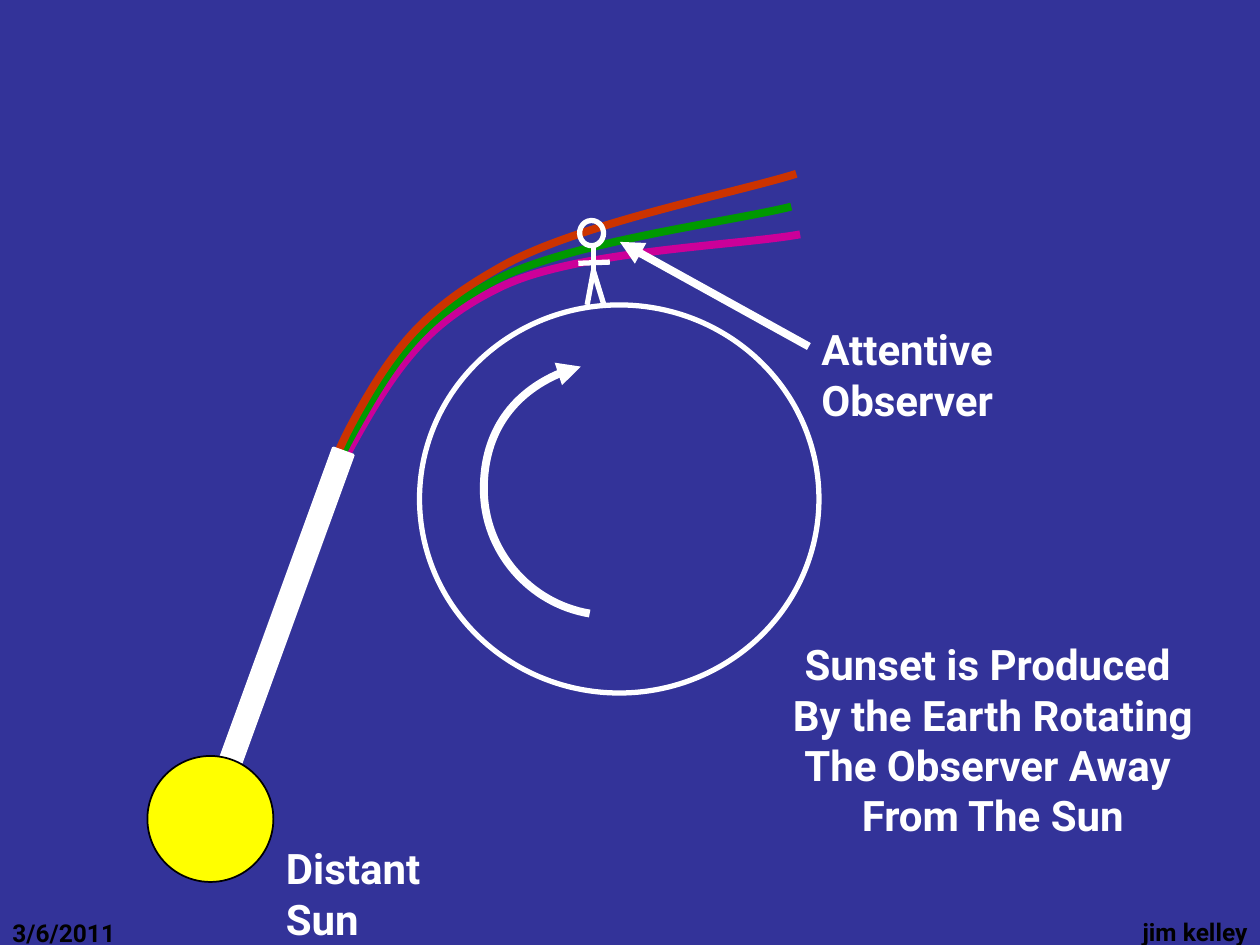
"""Build a slide showing how the rotating Earth produces sunset."""
from lxml import etree
from pptx import Presentation
from pptx import util as u
from pptx.dml.color import RGBColor
from pptx.enum import shapes, text
from pptx.oxml import ns

WHITE, BLACK, YELLOW = "FFFFFF", "000000", "FFFF00"
RAYS = {
    "CC0099": [(1.83, 6.17), (1.99, 5.73), (2.43, 4.19), (2.79, 3.54), (3.15, 2.89),
               (3.4, 2.55), (3.99, 2.27), (4.58, 1.99), (5.85, 1.95), (6.35, 1.86)],
    "009900": [(1.83, 6.04), (1.99, 5.61), (2.43, 4.12), (2.78, 3.48), (3.13, 2.84),
               (3.35, 2.53), (3.94, 2.22), (4.52, 1.92), (5.8, 1.76), (6.28, 1.64)],
    "CC3300": [(1.88, 6.01), (2.03, 5.57), (2.44, 4.02), (2.79, 3.37), (3.14, 2.72),
               (3.4, 2.44), (3.99, 2.11), (4.58, 1.78), (5.84, 1.53), (6.32, 1.38)],
}
ROTATION = [(4.68, 4.87), (4.2, 4.79), (3.84, 4.37), (3.84, 3.88),
            (3.84, 3.42), (4.16, 3.01), (4.61, 2.91)]
NECK, HIP = (4.71, 1.95), (4.71, 2.15)
LIMBS = [(HIP, (4.79, 2.41)), (HIP, (4.66, 2.42)), ((4.84, 2.08), (4.59, 2.09))]


def color(value):
    return RGBColor.from_string(value)


def inches(values):
    return [u.Inches(value) for value in values]


def write_text(frame, lines, size=24, font="Roboto", fill=WHITE, bold=True, align="LEFT"):
    for index, line in enumerate(lines):
        paragraph = frame.paragraphs[0] if index == 0 else frame.add_paragraph()
        paragraph.alignment = getattr(text.PP_ALIGN, align)
        run = paragraph.add_run()
        run.text = line
        run.font.name, run.font.size, run.font.bold = font, u.Pt(size), bold
        run.font.color.rgb = color(fill)


class Canvas:
    def __init__(self, slide, background="333399"):
        self.slide = slide
        self.target = slide.shapes
        slide.background.fill.solid()
        slide.background.fill.fore_color.rgb = color(background)

    def start_group(self):
        self.target = self.slide.shapes.add_group_shape().shapes

    def end_group(self):
        self.target = self.slide.shapes

    def stroke(self, shape, line, width, arrow=False):
        shape.line.color.rgb = color(line)
        shape.line.width = u.Pt(width)
        if arrow:
            etree.SubElement(shape.line._get_or_add_ln(), ns.qn("a:tailEnd"), type="triangle")

    def shape(self, kind, box, fill=None, line=WHITE, width=3, rotation=0):
        shape = self.target.add_shape(getattr(shapes.MSO_SHAPE, kind), *inches(box))
        shape.shadow.inherit = False
        shape.rotation = rotation
        if fill:
            shape.fill.solid()
            shape.fill.fore_color.rgb = color(fill)
        else:
            shape.fill.background()
        self.stroke(shape, line, width)

    def curve(self, controls, line, width=4.5, arrow=False):
        start, *rest = [inches(point) for point in controls]
        builder = self.target.build_freeform(*start)
        builder.add_line_segments(rest, close=False)
        shape = builder.convert_to_shape()
        segments = list(shape._element.iter(ns.qn("a:lnTo")))
        for first in range(0, len(segments), 3):
            bend, *others = segments[first:first + 3]
            bend.tag = ns.qn("a:cubicBezTo")
            for other in others:
                bend.append(other[0])
                other.getparent().remove(other)
        shape.shadow.inherit = False
        shape.fill.background()
        self.stroke(shape, line, width, arrow)

    def line(self, start, end, width=3, arrow=False):
        connector = self.target.add_connector(
            shapes.MSO_CONNECTOR.STRAIGHT, *inches(start + end))
        self.stroke(connector, WHITE, width, arrow)
        etree.SubElement(connector._element.spPr, ns.qn("a:effectLst"))

    def label(self, box, lines, wrap=True, right_margin=0.1, **style):
        frame = self.target.add_textbox(*inches(box)).text_frame
        frame.word_wrap = wrap
        frame.margin_right = u.Inches(right_margin)
        write_text(frame, lines, **style)


def main():
    presentation = Presentation()
    presentation.slide_width, presentation.slide_height = inches((10, 7.5))
    canvas = Canvas(presentation.slides.add_slide(presentation.slide_layouts[6]))

    canvas.label((0, 7.24, 2.33, 0.52), ["3/6/2011"], size=14, fill=BLACK)
    canvas.label((6.83, 7.23, 3.17, 0.52), ["jim kelley"], size=14, fill=BLACK, align="RIGHT")
    for ray_color, controls in RAYS.items():
        canvas.curve(controls, ray_color)

    canvas.start_group()
    canvas.line(NECK, HIP)
    canvas.curve(ROTATION, WHITE, arrow=True)
    for start, end in LIMBS:
        canvas.line(start, end)
    canvas.shape("OVAL", (4.6, 1.75, 0.19, 0.2), rotation=357.5)
    canvas.shape("OVAL", (3.33, 2.42, 3.17, 3.08))
    canvas.end_group()

    canvas.label((2.17, 6.64, 1.92, 0.5), ["Distant Sun"], right_margin=0.25)
    canvas.label((6.42, 2.52, 2.96, 0.5), ["Attentive Observer"], right_margin=0.25)
    canvas.line((6.42, 2.75), (4.92, 1.92), width=4.5, arrow=True)
    canvas.label((6.18, 5.02, 3.4, 1.7),
                 ["Sunset is Produced ", "By the Earth Rotating",
                  "The Observer Away ", "From The Sun"], wrap=False, align="CENTER")
    canvas.shape("RECTANGLE", (2.17, 3.5, 0.17, 2.75), fill=WHITE, width=1.5, rotation=20)
    canvas.shape("OVAL", (1.17, 6, 1, 1), fill=YELLOW, line=BLACK, width=1)
    presentation.save("out.pptx")


if __name__ == "__main__":
    main()
